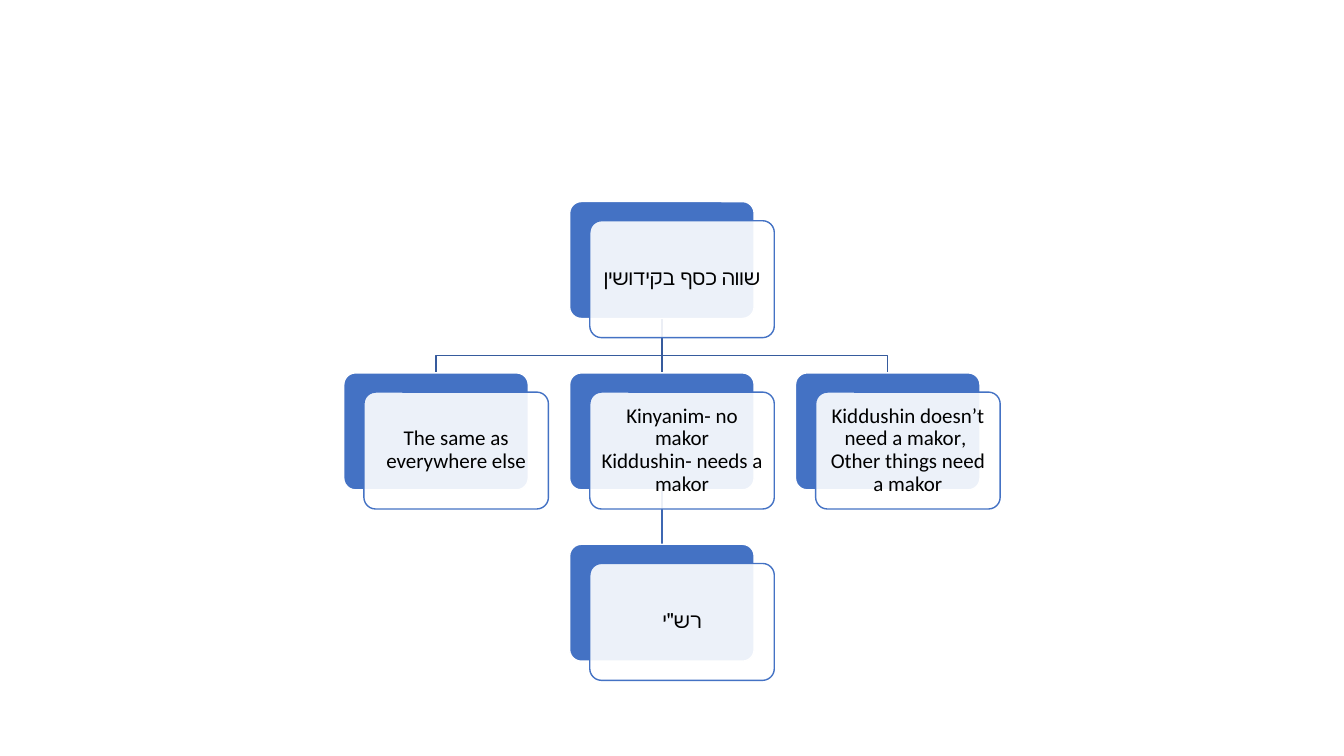
from dataclasses import dataclass

from pptx import Presentation
from pptx.dml.color import RGBColor
from pptx.enum import shapes, text
from pptx.oxml import ns
from pptx.oxml.xmlchemy import OxmlElement
from pptx.shapes.autoshape import Shape
from pptx.slide import Slide
from pptx.util import Inches, Pt

BLUE = RGBColor(0x44, 0x72, 0xC4)
LINK = RGBColor(0x36, 0x5B, 0x9D)
LINK_LOW = RGBColor(0x3E, 0x67, 0xB2)
WHITE = RGBColor(0xFF, 0xFF, 0xFF)
BLACK = RGBColor(0x00, 0x00, 0x00)

LEFT, TOP = 3.41, 2.0
COL_STEP, ROW_STEP = 2.24, 1.7
CARD_W, CARD_H = 1.83, 1.16
OFFSET_X, OFFSET_Y = 0.2, 0.19
BEND = 0.37


@dataclass(frozen=True)
class Node:
    label: str
    col: int
    row: int

    @property
    def x(self) -> float:
        return LEFT + self.col * COL_STEP

    @property
    def y(self) -> float:
        return TOP + self.row * ROW_STEP

    @property
    def mid(self) -> float:
        return self.x + CARD_W / 2


ROOT = Node("שווה כסף בקידושין", 1, 0)
SAME = Node("The same as everywhere else", 0, 1)
KINYANIM = Node("Kinyanim- no makor\nKiddushin- needs a makor", 1, 1)
RASHI = Node('רש"י', 1, 2)
KIDDUSHIN = Node("Kiddushin doesn’t need a makor, \nOther things need a makor", 2, 1)
NODES = [ROOT, SAME, KINYANIM, RASHI, KIDDUSHIN]


def add_card(s: Slide, x: float, y: float, fill: RGBColor, line: RGBColor) -> Shape:
    sp = s.shapes.add_shape(
        shapes.MSO_SHAPE.ROUNDED_RECTANGLE,
        Inches(x), Inches(y), Inches(CARD_W), Inches(CARD_H),
    )
    sp.adjustments[0] = 0.1
    sp.shadow.inherit = False
    sp.fill.solid()
    sp.fill.fore_color.rgb = fill
    sp.line.color.rgb = line
    sp.line.width = Pt(1)
    return sp


def set_alpha(sp: Shape, percent: int) -> None:
    color = sp._element.spPr.find(ns.qn("a:solidFill"))[0]
    alpha = OxmlElement("a:alpha")
    alpha.set("val", str(percent * 1000))
    color.append(alpha)


def write(sp: Shape, label: str, *, size: int, font: str, color: RGBColor) -> None:
    tf = sp.text_frame
    tf.word_wrap = True
    tf.vertical_anchor = text.MSO_ANCHOR.MIDDLE
    tf.margin_left = tf.margin_right = tf.margin_top = tf.margin_bottom = Inches(0.06)
    p = tf.paragraphs[0]
    p.text = label.replace("\n", "\v")
    p.alignment = text.PP_ALIGN.CENTER
    p.line_spacing = 0.9
    p._p.get_or_add_pPr().set("rtl", "1")
    for r in p.runs:
        r.font.size = Pt(size)
        r.font.name = font
        r.font.color.rgb = color
    for br in p._p.findall(ns.qn("a:br")):
        props = OxmlElement("a:rPr")
        props.set("sz", str(size * 100))
        br.append(props)


def add_node(s: Slide, node: Node) -> Shape:
    back = add_card(s, node.x, node.y, BLUE, WHITE)
    front = add_card(s, node.x + OFFSET_X, node.y + OFFSET_Y, WHITE, BLUE)
    set_alpha(front, 90)
    write(front, node.label, size=15, font="Calibri", color=BLACK)
    return back


def add_straight(s: Slide, parent: Shape, child: Shape, color: RGBColor) -> None:
    link = s.shapes.add_connector(shapes.MSO_CONNECTOR.STRAIGHT, 0, 0, 0, 0)
    link.begin_connect(parent, 2)
    link.end_connect(child, 0)
    link.line.color.rgb = color
    link.line.width = Pt(1)
    link._element.spPr.append(OxmlElement("a:effectLst"))
    s.shapes._spTree.insert(2, link._element)


def add_elbow(s: Slide, parent: Node, child: Node, color: RGBColor) -> None:
    bottom = parent.y + CARD_H
    bend = bottom + BEND
    route = [(parent.mid, bend), (child.mid, bend), (child.mid, child.y)]
    builder = s.shapes.build_freeform(Inches(parent.mid), Inches(bottom))
    builder.add_line_segments([(Inches(x), Inches(y)) for x, y in route], close=False)
    sp = builder.convert_to_shape()
    sp.shadow.inherit = False
    sp.fill.background()
    sp.line.color.rgb = color
    sp.line.width = Pt(1)
    s.shapes._spTree.insert(2, sp._element)


def main() -> None:
    prs = Presentation()
    prs.slide_width, prs.slide_height = Inches(13.33), Inches(7.5)
    s = prs.slides.add_slide(prs.slide_layouts[6])
    cards = {node: add_node(s, node) for node in NODES}
    add_elbow(s, ROOT, SAME, LINK)
    add_straight(s, cards[ROOT], cards[KINYANIM], LINK)
    add_straight(s, cards[KINYANIM], cards[RASHI], LINK_LOW)
    add_elbow(s, ROOT, KIDDUSHIN, LINK)
    prs.save("out.pptx")


if __name__ == "__main__":
    main()
